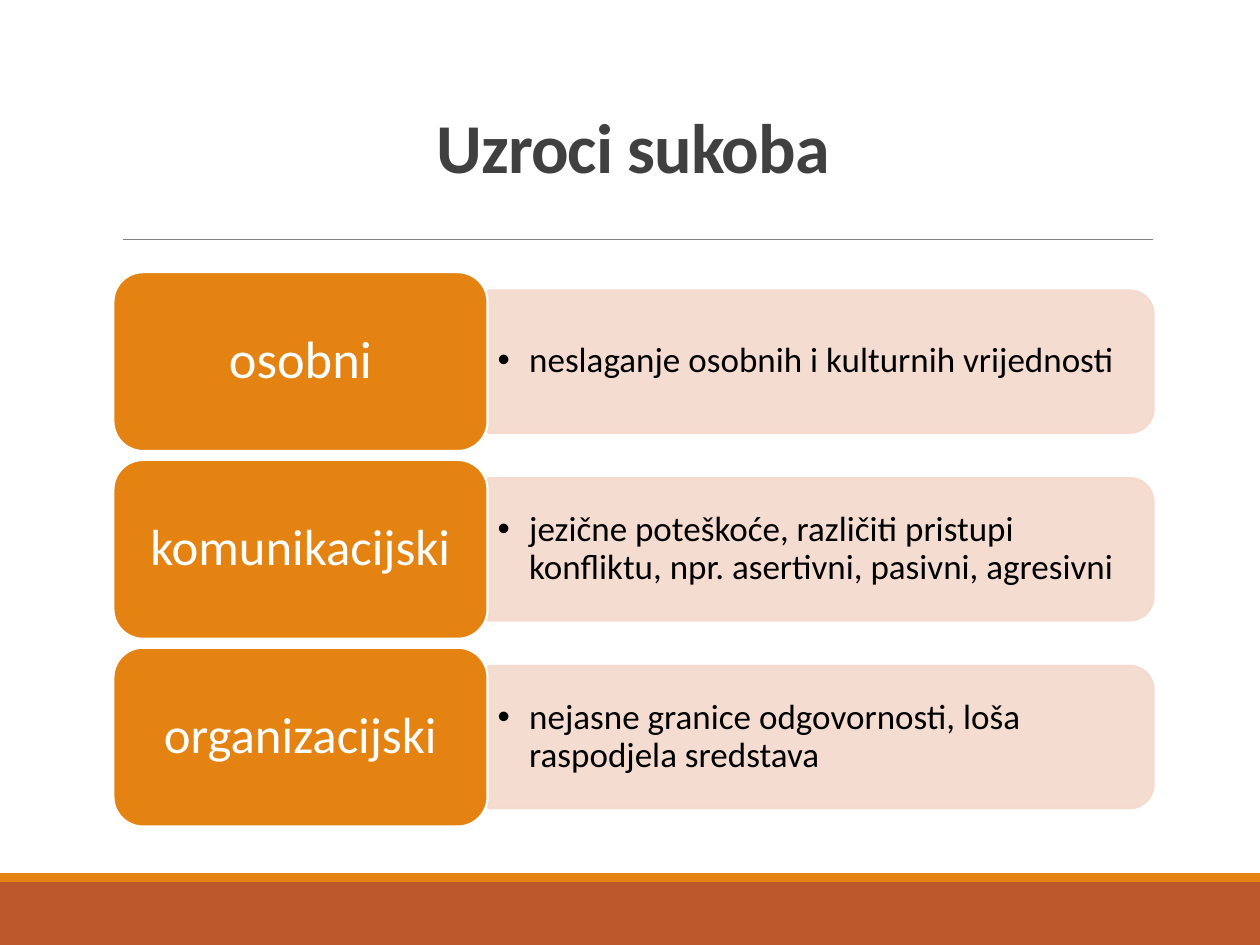
import pptx
import pptx.util
import pptx.dml.color
import pptx.enum.shapes
import pptx.enum.text
import pptx.oxml.ns
import lxml.etree

PX = 9144  # EMU per px, at 100 px to the inch
FONT = "Calibri"
HUES = {
    "rust": "BD582C",
    "amber": "E48312",
    "rule": "808080",
    "title": "404040",
    "panel": "F5D9CC",
    "white": "FFFFFF",
    "black": "000000",
}
ROWS = [
    ("osobni", 30, "neslaganje osobnih i kulturnih vrijednosti"),
    ("komunikacijski", 29,
     "jezične poteškoće, različiti pristupi konfliktu, npr. asertivni, pasivni, agresivni"),
    ("organizacijski", 29, "nejasne granice odgovornosti, loša raspodjela sredstava"),
]
KIND = pptx.enum.shapes.MSO_SHAPE
ALIGN = pptx.enum.text.PP_ALIGN
ANCHOR = pptx.enum.text.MSO_ANCHOR


def hue(name):
    return pptx.dml.color.RGBColor.from_string(HUES[name])


def sub(node, tag, **attrs):
    return lxml.etree.SubElement(node, pptx.oxml.ns.qn(tag), attrs)


def place(box):
    return [v * PX for v in box]


def shape(slide, kind, box, fill, line=None):
    item = slide.shapes.add_shape(kind, *place(box))
    item.shadow.inherit = False
    item.fill.solid()
    item.fill.fore_color.rgb = hue(fill)
    if line:
        item.line.color.rgb = hue(line)
        item.line.width = pptx.util.Pt(1.25)
    else:
        item.line.fill.background()
    return item


def write(item, text, size, color, align, anchor, pad, gap):
    """Fill the item with one styled paragraph; pad is (side, top) in px."""
    frame = item.text_frame
    frame.word_wrap = True
    frame.vertical_anchor = anchor
    frame.margin_left = frame.margin_right = pad[0] * PX
    frame.margin_top = frame.margin_bottom = pad[1] * PX
    frame.text = text
    para = frame.paragraphs[0]
    para.alignment = align
    para.line_spacing = gap
    font = para.runs[0].font
    font.name = FONT
    font.size = pptx.util.Pt(size)
    font.color.rgb = hue(color)
    return para


def head(slide, box):
    # Title with a thin rule below
    left, top, wide, high = box
    item = slide.shapes.add_textbox(*place((left, top, wide, 94)))
    para = write(item, "Uzroci sukoba", 40, "title", ALIGN.CENTER, ANCHOR.BOTTOM, (10, 5), 0.85)
    font = para.runs[0].font
    font.bold = True
    font._element.set("spc", "-50")
    rule = slide.shapes.add_connector(
        pptx.enum.shapes.MSO_CONNECTOR.STRAIGHT,
        *place((left + 8, top + high, left + wide, top + high)))
    rule.line.color.rgb = hue("rule")
    rule.line.width = pptx.util.Pt(0.5)
    sub(rule._element.spPr, "a:effectLst")


def cause(slide, box, name, size, note):
    left, top, wide, high = box
    tab = 297
    # Pale panel: an upright shape turned a quarter about its centre
    long, thick = wide - tab, 113
    mid_x, mid_y = left + tab + long // 2, top + high // 2
    panel = shape(slide, KIND.ROUND_2_SAME_RECTANGLE,
                  (mid_x - thick // 2, mid_y - long // 2, thick, long), "panel", "panel")
    panel.rotation = 90
    for tint in panel._element.spPr.iter(pptx.oxml.ns.qn("a:srgbClr")):
        sub(tint, "a:alpha", val="90000")

    # Bulleted note on the panel
    item = slide.shapes.add_textbox(*place((left + tab, top + 20, long - 6, high - 40)))
    para = write(item, note, 20, "black", ALIGN.LEFT, ANCHOR.MIDDLE, (8, 4), 0.9)
    para.level = 1
    props = para._p.get_or_add_pPr()
    props.set("marL", str(25 * PX))
    props.set("indent", str(-25 * PX))
    sub(props, "a:buFont", typeface="Arial")
    sub(props, "a:buChar", char="•")

    # Name tab
    tag = shape(slide, KIND.ROUNDED_RECTANGLE, (left, top, tab, high), "amber", "white")
    write(tag, name, size, "white", ALIGN.CENTER, ANCHOR.MIDDLE, (12, 6), 0.9)


def causes(slide, box):
    # Equal rows with equal gaps
    left, top, wide, high = box
    tall = 142
    step = (high - tall) // (len(ROWS) - 1)
    for i, row in enumerate(ROWS):
        cause(slide, (left, top + i * step, wide, tall), *row)


def foot(slide, box):
    # Thick band with a thin stripe on top
    left, top, wide, high = box
    shape(slide, KIND.RECTANGLE, (left, top + 7, wide, high - 7), "rust")
    shape(slide, KIND.RECTANGLE, (left, top, wide, 7), "amber")


def main():
    deck = pptx.Presentation()
    deck.slide_width, deck.slide_height = 1000 * PX, 750 * PX
    slide = deck.slides.add_slide(deck.slide_layouts[6])
    foot(slide, (0, 693, 1000, 57))
    head(slide, (90, 60, 825, 130))
    causes(slide, (90, 216, 825, 440))
    deck.save("out.pptx")


if __name__ == "__main__":
    main()
